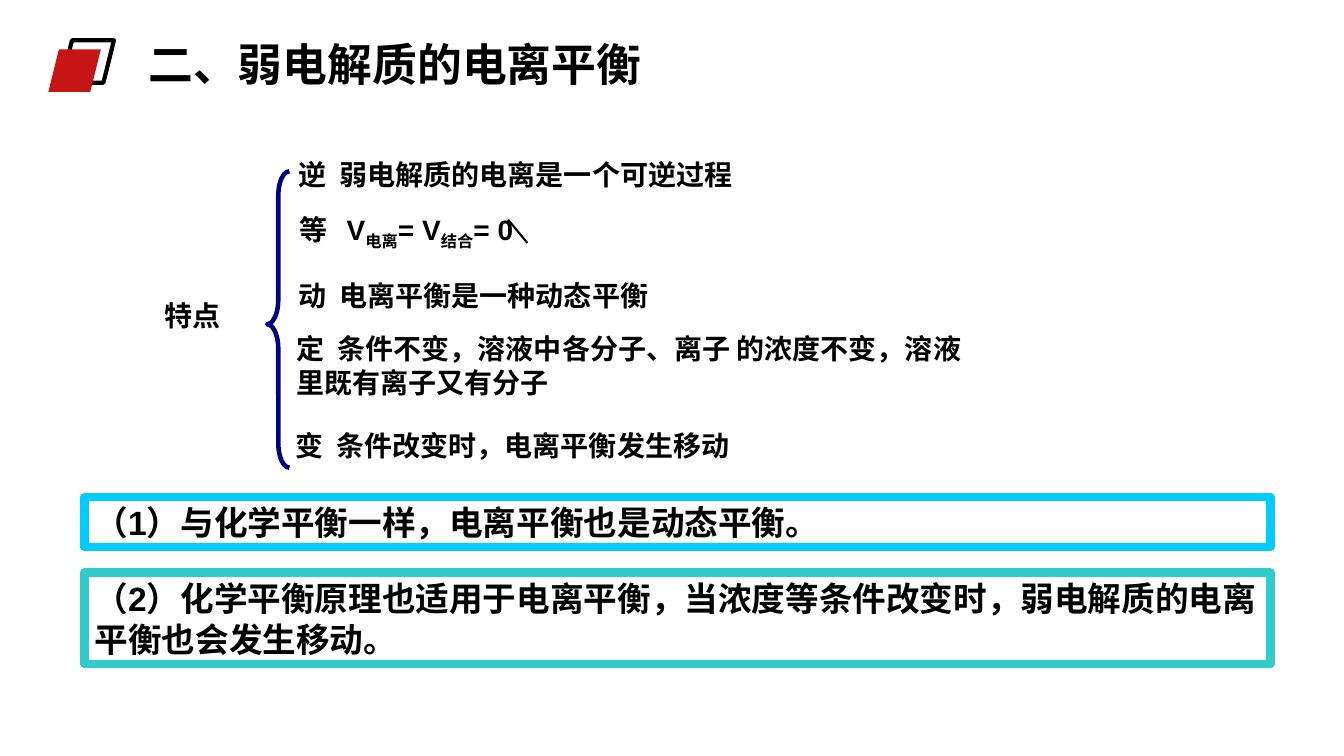
"""Build the slide on the ionization equilibrium of weak electrolytes."""
from dataclasses import dataclass

from pptx import Presentation
from pptx.dml.color import RGBColor
from pptx.enum import lang, shapes, text
from pptx.oxml.ns import qn
from pptx.util import Inches, Pt
from lxml import etree


@dataclass(frozen=True)
class Theme:
    font: str = "Arial"
    ink: str = "000000"
    accent: str = "C51515"
    brace: str = "000080"
    first_frame: str = "00CCFF"
    second_frame: str = "33CCCC"
    title_size: int = 32
    box_size: int = 24
    item_size: int = 20


THEME = Theme()


def color(value):
    return RGBColor.from_string(value)


def format_paragraph(paragraph, size):
    paragraph.alignment = text.PP_ALIGN.LEFT
    font = paragraph.font
    font.name, font.size, font.bold = THEME.font, Pt(size), True
    font.color.rgb = color(THEME.ink)
    for run in paragraph.runs:
        run.font.language_id = lang.MSO_LANGUAGE_ID.SIMPLIFIED_CHINESE


def set_tab(paragraph, position):
    properties = paragraph._p.get_or_add_pPr()
    tabs = properties.makeelement(qn("a:tabLst"), {})
    etree.SubElement(tabs, qn("a:tab"), pos=str(Inches(position)), algn="l")
    properties.insert_element_before(tabs, "a:defRPr", "a:extLst")


def add_title(slide, content):
    title = slide.shapes.title
    title.left, title.top = Inches(1.37), Inches(0.31)
    title.width, title.height = Inches(7.58), Inches(0.64)
    title.text_frame.text = content
    title.text_frame.vertical_anchor = text.MSO_ANCHOR.MIDDLE
    format_paragraph(title.text_frame.paragraphs[0], THEME.title_size)


def add_shape(parent, kind, bounds, fill=None, line=None, line_width=0):
    shape = parent.shapes.add_shape(kind, *map(Inches, bounds))
    shape.shadow.inherit = False
    if fill:
        shape.fill.solid()
        shape.fill.fore_color.rgb = color(fill)
    else:
        shape.fill.background()
    if line:
        shape.line.color.rgb = color(line)
        shape.line.width = Pt(line_width)
    else:
        shape.line.fill.background()
    return shape


def add_emblem(slide):
    emblem = slide.shapes.add_group_shape()
    kind = shapes.MSO_SHAPE.FLOWCHART_DATA
    add_shape(emblem, kind, (0.61, 0.4, 0.52, 0.42), line=THEME.ink, line_width=3)
    add_shape(emblem, kind, (0.48, 0.49, 0.52, 0.42), fill=THEME.accent)


def add_item(slide, bounds, parts, tab=0.41):
    """Add one line of text; every second part is a subscript."""
    box = slide.shapes.add_textbox(*map(Inches, bounds))
    box.text_frame.word_wrap = True
    paragraph = box.text_frame.paragraphs[0]
    for index, part in enumerate(parts):
        run = paragraph.add_run()
        run.text = part
        if index % 2:
            run.font._element.set("baseline", "-25000")
    format_paragraph(paragraph, THEME.item_size)
    if "\t" in parts[0]:
        set_tab(paragraph, tab)


def add_brace(slide):
    brace = add_shape(slide, shapes.MSO_SHAPE.LEFT_BRACE, (2.65, 1.7, 0.22, 2.94),
                      line=THEME.brace, line_width=3.25)
    brace.adjustments[0], brace.adjustments[1] = 1.107, 0.516


def add_slash(slide):
    ends = map(Inches, (5.04, 2.18, 5.23, 2.41))
    slash = slide.shapes.add_connector(shapes.MSO_CONNECTOR.STRAIGHT, *ends)
    slash.line.color.rgb = color(THEME.ink)
    slash.line.width = Pt(1.5)
    etree.SubElement(slash._element.spPr, qn("a:effectLst"))


def add_framed_text(slide, top, height, frame, content):
    box = add_shape(slide, shapes.MSO_SHAPE.RECTANGLE, (0.84, top, 11.76, height),
                    line=frame, line_width=6)
    box.text_frame.word_wrap = True
    box.text_frame.vertical_anchor = text.MSO_ANCHOR.MIDDLE
    box.text_frame.text = content
    format_paragraph(box.text_frame.paragraphs[0], THEME.box_size)


def main():
    presentation = Presentation()
    presentation.slide_width, presentation.slide_height = Inches(13.33), Inches(7.5)
    slide = presentation.slides.add_slide(presentation.slide_layouts[5])
    add_emblem(slide)
    add_title(slide, "二、弱电解质的电离平衡")
    add_item(slide, (1.53, 2.91, 1.1, 0.44), ["特点"])
    add_brace(slide)
    add_item(slide, (2.86, 1.51, 5.21, 0.44), ["逆\t弱电解质的电离是一个可逆过程"])
    add_item(slide, (2.87, 2.06, 2.77, 0.44),
             ["等\tV", "电离", "= V", "结合", "= 0"], tab=0.47)
    add_slash(slide)
    add_item(slide, (2.86, 2.71, 4.69, 0.44), ["动\t电离平衡是一种动态平衡"])
    add_item(slide, (2.84, 3.24, 6.95, 0.77),
             ["定\t条件不变，溶液中各分子、离子 的浓度不变，溶液里既有离子又有分子"])
    add_item(slide, (2.83, 4.2, 5.26, 0.44), ["变\t条件改变时，电离平衡发生移动"])
    add_framed_text(slide, 4.93, 0.5, THEME.first_frame,
                    "（1）与化学平衡一样，电离平衡也是动态平衡。")
    add_framed_text(slide, 5.68, 0.91, THEME.second_frame,
                    "（2）化学平衡原理也适用于电离平衡，当浓度等条件改变时，"
                    "弱电解质的电离平衡也会发生移动。")
    presentation.save("out.pptx")


if __name__ == "__main__":
    main()
